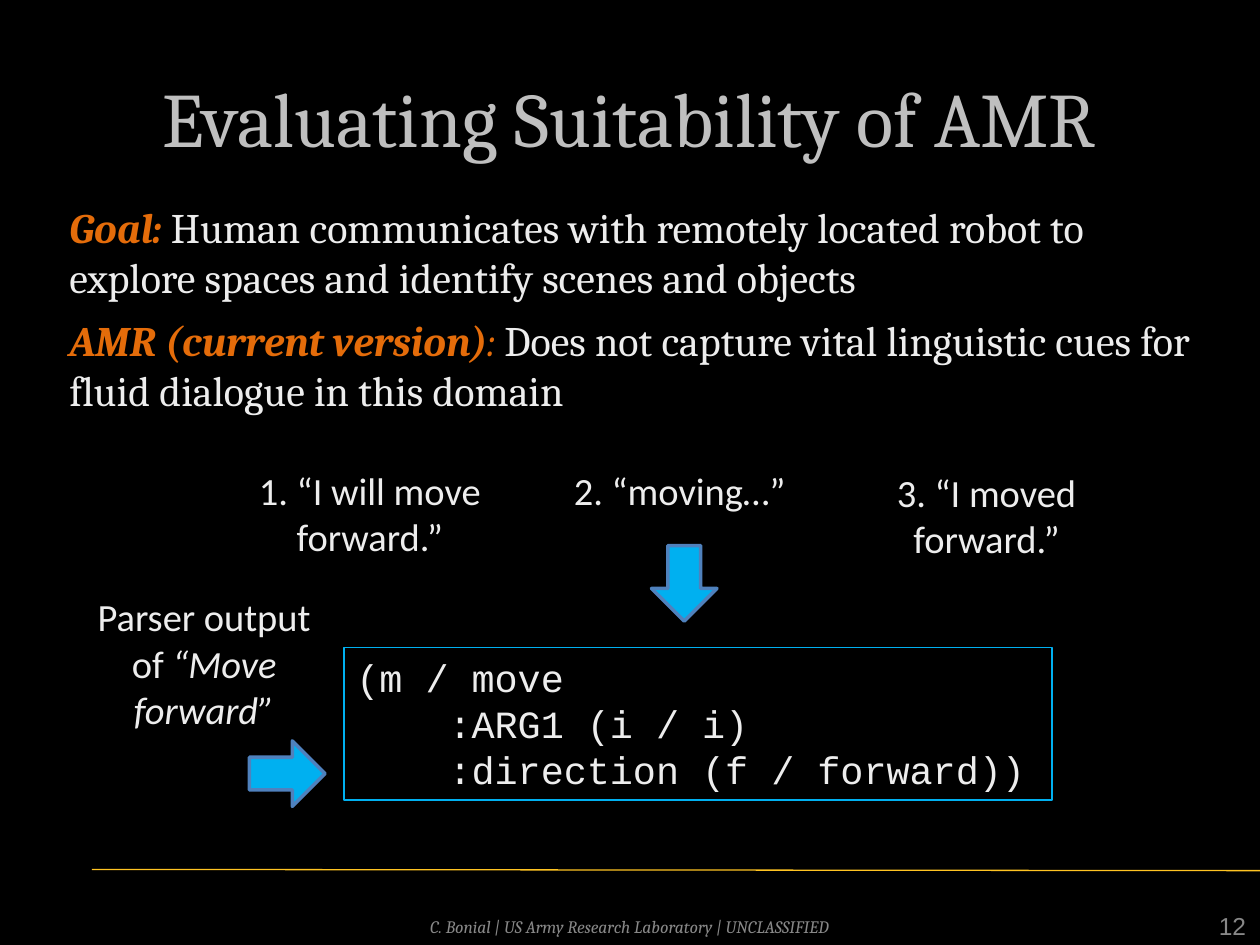
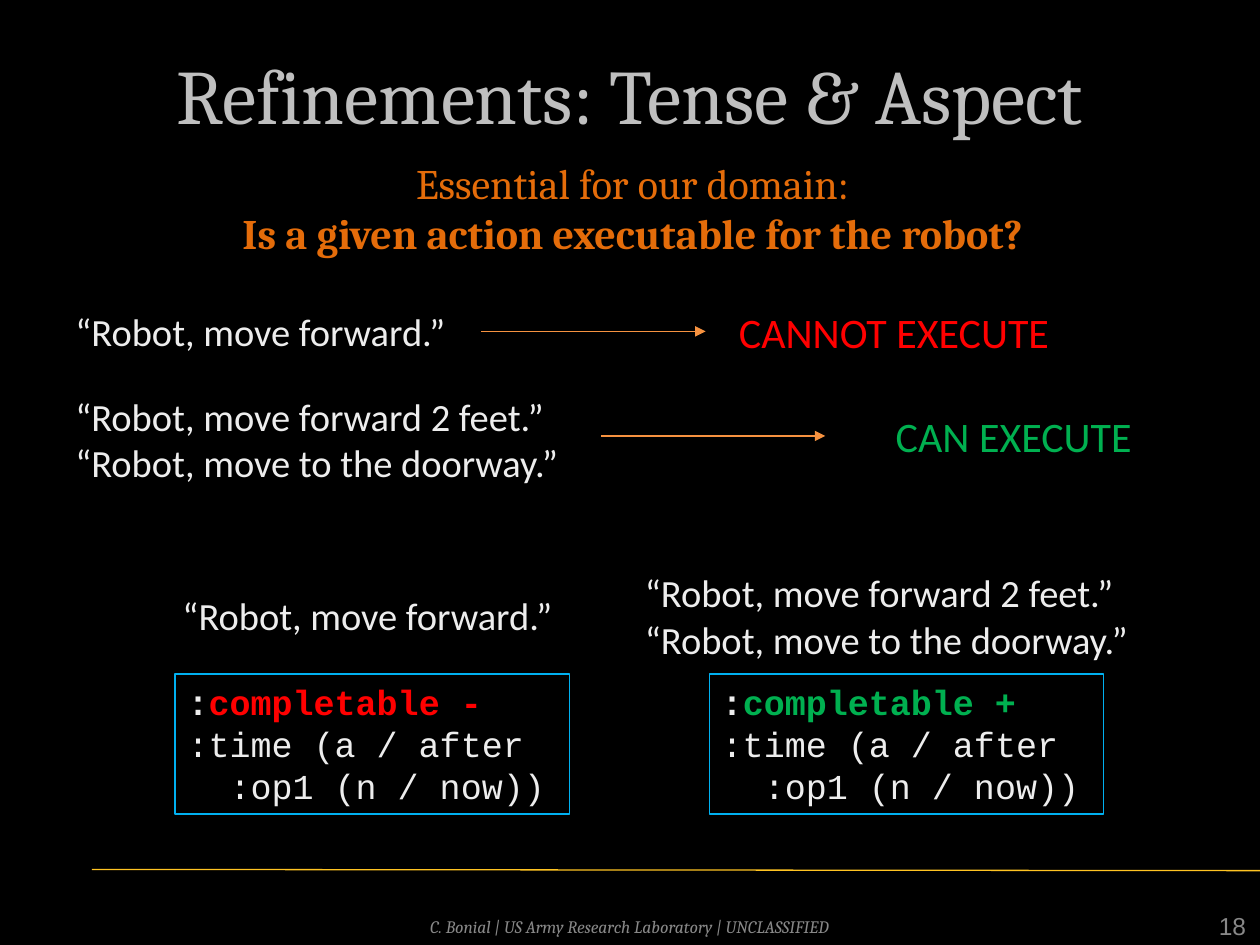
from pptx import Presentation
from pptx.dml.color import RGBColor
from pptx.enum.shapes import MSO_CONNECTOR, MSO_SHAPE
from pptx.enum.text import MSO_ANCHOR, PP_ALIGN
from pptx.oxml.ns import qn
from pptx.util import Inches, Pt
from lxml import etree

LEFT, CENTER, RIGHT = PP_ALIGN.LEFT, PP_ALIGN.CENTER, PP_ALIGN.RIGHT
TOP, MIDDLE = MSO_ANCHOR.TOP, MSO_ANCHOR.MIDDLE
STRAIGHT = MSO_CONNECTOR.STRAIGHT
RECTANGLE, UP_ARROW = MSO_SHAPE.RECTANGLE, MSO_SHAPE.UP_ARROW
SIDE_LEFT, SIDE_RIGHT = 1, 3

BLACK, SILVER, GREY, PALE = "000000", "BFBFBF", "888888", "EDEDED"
ORANGE, GOLD, AMBER = "E46C0A", "FFC422", "F69240"
RED, GREEN, CYAN, BLUE = "FF0000", "00B050", "00B0F0", "4F81BD"

TITLE = {"name": "Cambria", "size": Pt(44), "color": SILVER}
BODY = {"name": "Cambria", "size": Pt(24), "color": PALE}
FOOTER = {"name": "Cambria", "size": Pt(10), "color": GREY, "italic": True}
NUMBER = {"name": "Arial", "size": Pt(14), "color": GREY}
SPEECH = {"name": "Calibri", "size": Pt(22), "color": PALE}
VERDICT = {"name": "Calibri", "size": Pt(24)}
CODE = {"name": "Courier New", "size": Pt(22), "color": PALE}
SMALL_CODE = {**CODE, "size": Pt(20)}

SHORT_ORDER = ["“Robot, move forward.”"]
FULL_ORDERS = ["“Robot, move forward 2 feet.”", "“Robot, move to the doorway.”"]


def rgb(value):
    return RGBColor.from_string(value)


def write(shape, paragraphs, style, align=LEFT, anchor=TOP, inset=0.1, gap=0):
    """Fill a shape with paragraphs: strings, or lists of (text, format changes)."""
    frame = shape.text_frame
    side, edge = Inches(inset), Inches(0.05)
    settings = {"word_wrap": True, "vertical_anchor": anchor, "margin_left": side,
                "margin_right": side, "margin_top": edge, "margin_bottom": edge}
    for key, value in settings.items():
        setattr(frame, key, value)
    for index, content in enumerate(paragraphs):
        para = frame.add_paragraph() if index else frame.paragraphs[0]
        para.alignment = align
        para.space_before = Pt(gap if index else 0)
        for text, changes in [(content, {})] if isinstance(content, str) else content:
            span = para.add_run()
            span.text = text
            for key, value in {**style, **changes}.items():
                if key == "color":
                    span.font.color.rgb = rgb(value)
                else:
                    setattr(span.font, key, value)


def add_text(slide, box, paragraphs, style, **layout):
    shape = slide.shapes.add_textbox(*map(Inches, box))
    write(shape, paragraphs, style, **layout)
    return shape


def add_line(slide, start, end, color):
    line = slide.shapes.add_connector(STRAIGHT, *map(Inches, (*start, *end)))
    line.line.color.rgb = rgb(color)
    line.line.width = Pt(0.75)
    etree.SubElement(line._element.spPr, qn("a:effectLst"))
    return line


def add_shape(slide, kind, box, line_color, line_width, fill=None):
    shape = slide.shapes.add_shape(kind, *map(Inches, box))
    shape.shadow.inherit = False
    if fill:
        shape.fill.solid()
        shape.fill.fore_color.rgb = rgb(fill)
    else:
        shape.fill.background()
    shape.line.color.rgb = rgb(line_color)
    shape.line.width = Pt(line_width)
    return shape


def add_code(slide, box, lines, style):
    write(add_shape(slide, RECTANGLE, box, CYAN, 0.75), lines, style)


def add_block_arrow(slide, left, top, rotation):
    arrow = add_shape(slide, UP_ARROW, (left, top, 0.52, 0.6), BLUE, 2, CYAN)
    arrow.rotation = rotation


def add_base_slide(deck, title, title_height, number):
    slide = deck.slides.add_slide(deck.slide_layouts[6])
    slide.background.fill.solid()
    slide.background.fill.fore_color.rgb = rgb(BLACK)
    add_line(slide, (10, 6.91), (0.73, 6.9), GOLD)
    centred = {"align": CENTER, "anchor": MIDDLE, "inset": 0.05}
    add_text(slide, (1.62, 7.23, 6.75, 0.25),
             ["C. Bonial | US Army Research Laboratory | UNCLASSIFIED"], FOOTER, **centred)
    add_text(slide, (0.5, 0.3, 9, title_height), [title], TITLE, **centred)
    add_text(slide, (9.34, 7.19, 0.6, 0.31), [number], NUMBER,
             align=RIGHT, anchor=MIDDLE, inset=0.05)
    return slide


def add_execution_row(slide, middle, orders, orders_width, verdict, color, verdict_left):
    """Link spoken orders to a verdict, both centred on the height given."""
    height = 0.47 if len(orders) == 1 else 0.78
    source = add_text(slide, (0.5, middle - height / 2, orders_width, height), orders, SPEECH)
    target = add_text(slide, (verdict_left, middle - 0.25, 2.99, 0.5), [verdict],
                      {**VERDICT, "color": color}, align=CENTER)
    arrow = add_line(slide, (0.5 + orders_width, middle), (verdict_left, middle), AMBER)
    arrow.begin_connect(source, SIDE_RIGHT)
    arrow.end_connect(target, SIDE_LEFT)
    etree.SubElement(arrow.line._get_or_add_ln(), qn("a:tailEnd"), type="triangle")


def add_completable_code(slide, left, sign, color):
    add_code(slide, (left, 5.35, 3.13, 1.11),
             [[(":", {"bold": True}),
               (f"completable {sign}", {"bold": True, "color": color})],
              ":time (a / after", "  :op1 (n / now))"], SMALL_CODE)


def build_suitability_slide(deck):
    slide = add_base_slide(deck, "Evaluating Suitability of AMR", 1.25, "12")
    slanted = {"color": ORANGE, "italic": True}
    lead = {**slanted, "bold": True}
    add_text(slide, (0.5, 1.55, 9, 1.82), [
        [("Goal: ", lead),
         ("Human communicates with remotely located robot to explore spaces "
          "and identify scenes and objects", {})],
        [("AMR (current version)", lead), (": ", slanted),
         ("Does not capture vital linguistic cues for fluid dialogue in this domain", {})],
    ], BODY, inset=0.05, gap=7)
    for box, utterance in (((1.44, 3.66, 2.99, 0.84), "1. “I will move forward.”"),
                           ((3.9, 3.66, 2.99, 0.47), "2. “moving…”"),
                           ((6.43, 3.67, 2.8, 0.84), "3. “I moved forward.”")):
        add_text(slide, box, [utterance], SPEECH, align=CENTER)
    add_block_arrow(slide, 5.17, 4.33, 180)
    add_code(slide, (2.73, 5.14, 5.62, 1.21),
             ["(m / move", "    :ARG1 (i / i)", "    :direction (f / forward))"], CODE)
    add_text(slide, (0.54, 4.66, 2.16, 1.22),
             [[("Parser output of ", {}), ("“Move forward”", {"italic": True})]],
             SPEECH, align=CENTER)
    add_block_arrow(slide, 2.02, 5.84, 90)


def build_refinements_slide(deck):
    slide = add_base_slide(deck, "Refinements: Tense & Aspect", 0.88, "18")
    add_text(slide, (0.83, 1.2, 8.38, 0.91),
             ["Essential for our domain:",
              [("Is a given action executable for the robot?", {"bold": True})]],
             {**BODY, "color": ORANGE}, align=CENTER, inset=0.05)
    add_execution_row(slide, 2.63, SHORT_ORDER, 3.32, "CANNOT EXECUTE", RED, 5.6)
    add_execution_row(slide, 3.46, FULL_ORDERS, 4.27, "CAN EXECUTE", GREEN, 6.55)
    add_text(slide, (1.35, 4.65, 3.34, 0.47), SHORT_ORDER, SPEECH)
    add_completable_code(slide, 1.39, "-", RED)
    add_text(slide, (5.02, 4.47, 4.19, 0.84), FULL_ORDERS, SPEECH)
    add_completable_code(slide, 5.63, "+", GREEN)


def main():
    deck = Presentation()
    deck.slide_width, deck.slide_height = Inches(10), Inches(7.5)
    build_suitability_slide(deck)
    build_refinements_slide(deck)
    deck.save("out.pptx")


if __name__ == "__main__":
    main()
